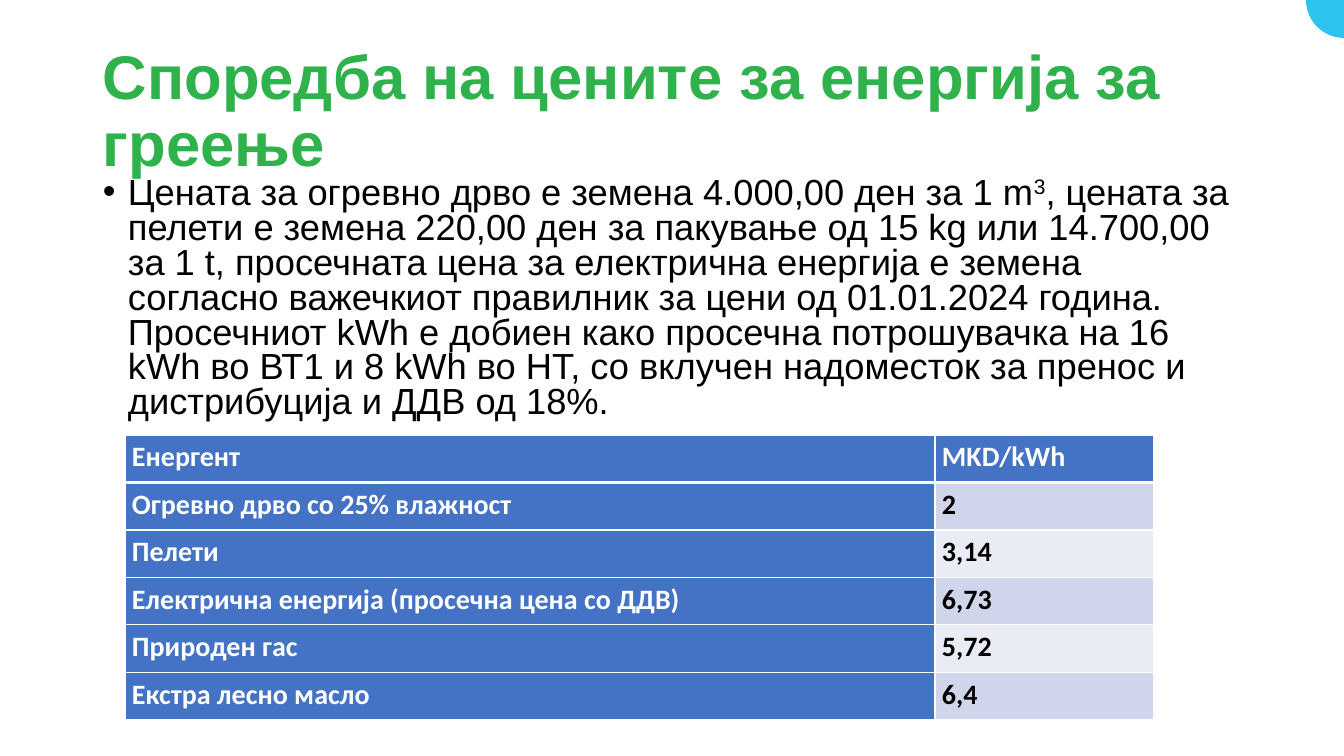
"""Build a slide comparing heating energy prices per kWh."""
from pptx import Presentation
from pptx.dml.color import RGBColor as Color
from pptx.enum.shapes import MSO_SHAPE as Shape
from pptx.enum.text import MSO_ANCHOR as Anchor, PP_ALIGN as Align
from pptx.oxml import parse_xml
from pptx.oxml.ns import nsdecls
from pptx.util import Emu, Pt

PX = 9071.43
THEME = {
    "green": Color.from_string("2FB24B"),
    "cyan": Color.from_string("2DC3EF"),
    "blue": Color.from_string("4472C4"),
    "bands": [Color.from_string("CFD5EA"), Color.from_string("E9EBF5")],
    "black": Color.from_string("000000"),
    "white": Color.from_string("FFFFFF"),
    "title_size": Pt(44),
    "body_size": Pt(25.9),
    "table_size": Pt(20),
    "text_font": "Arial",
    "table_font": "Calibri",
}
BODY = [
    ("Цената за огревно дрво е земена 4.000,00 ден за 1 m", None),
    ("3", "30000"),
    (", цената за пелети е земена 220,00 ден за пакување од 15 kg или 14.700,00 "
     "за 1 t, просечната цена за електрична енергија е земена согласно важечкиот "
     "правилник за цени од 01.01.2024 година. Просечниот kWh е добиен како "
     "просечна потрошувачка на 16 kWh во ВТ1 и 8 kWh во НТ, со вклучен "
     "надоместок за пренос и дистрибуција и ДДВ од 18%.", None),
]
PRICES = [
    ("Енергент", "MKD/kWh"),
    ("Огревно дрво со 25% влажност", "2"),
    ("Пелети", "3,14"),
    ("Електрична енергија (просечна цена со ДДВ)", "6,73"),
    ("Природен гас", "5,72"),
    ("Екстра лесно масло", "6,4"),
]


def px(*lengths):
    return [Emu(round(length * PX)) for length in lengths]


def set_font(para, face, size, color, bold):
    para.font.name = face
    para.font.size = size
    para.font.color.rgb = color
    para.font.bold = bold


deck = Presentation()
deck.slide_width, deck.slide_height = px(1344, 756)
page = deck.slides.add_slide(deck.slide_layouts[6])

corner = page.shapes.add_shape(Shape.OVAL, *px(1306, -38, 76, 76))
corner.shadow.inherit = False
corner.fill.solid()
corner.fill.fore_color.rgb = THEME["cyan"]
corner.line.fill.background()

title_box = page.shapes.add_textbox(*px(93, 40, 1159, 146))
title_box.text_frame.word_wrap = True
title_box.text_frame.vertical_anchor = Anchor.MIDDLE
title = title_box.text_frame.paragraphs[0]
title.text = "Споредба на цените за енергија за греење"
title.line_spacing = 0.9
set_font(title, THEME["text_font"], THEME["title_size"], THEME["green"], True)

body_box = page.shapes.add_textbox(*px(93, 173, 1159, 262))
body_box.text_frame.word_wrap = True
body = body_box.text_frame.paragraphs[0]
body.line_spacing = 0.8
body.space_before = Pt(10)
set_font(body, THEME["text_font"], THEME["body_size"], THEME["black"], False)
for text, baseline in BODY:
    span = body.add_run()
    span.text = text
    if baseline:
        span._r.get_or_add_rPr().set("baseline", baseline)
indent, = px(25)
body_props = body._p.get_or_add_pPr()
body_props.set("marL", str(indent))
body_props.set("indent", str(-indent))
for bullet in ('buFont {} typeface="Arial"', 'buChar {} char="•"'):
    default_font = body_props.find("{*}defRPr")
    element = parse_xml(f"<a:{bullet.format(nsdecls('a'))}/>")
    if default_font is None:
        body_props.append(element)
    else:
        default_font.addprevious(element)

table = page.shapes.add_table(len(PRICES), 2, *px(125, 435, 1029, 285)).table
for column, width in zip(table.columns, px(810, 219)):
    column.width = width

for row, texts in enumerate(PRICES):
    for col, text in enumerate(texts):
        cell = table.cell(row, col)
        is_price = row > 0 and col == 1
        cell.margin_left, cell.margin_top, cell.margin_right, cell.margin_bottom = px(7, 0, 7, 0)
        cell.fill.solid()
        cell.fill.fore_color.rgb = THEME["bands"][(row - 1) % 2] if is_price else THEME["blue"]
        para = cell.text_frame.paragraphs[0]
        para.text = text
        para.alignment = Align.JUSTIFY
        para.line_spacing = 1.15
        color = THEME["black"] if is_price else THEME["white"]
        set_font(para, THEME["table_font"], THEME["table_size"], color, True)
        for place, side in enumerate("LRTB"):
            heavy = (row, side) in ((0, "B"), (1, "T"))
            cell._tc.get_or_add_tcPr().insert(place, parse_xml(
                f'<a:ln{side} {nsdecls("a")} w="{Pt(3 if heavy else 1)}"><a:solidFill>'
                f'<a:srgbClr val="{THEME["white"]}"/></a:solidFill></a:ln{side}>'))

deck.save("out.pptx")
